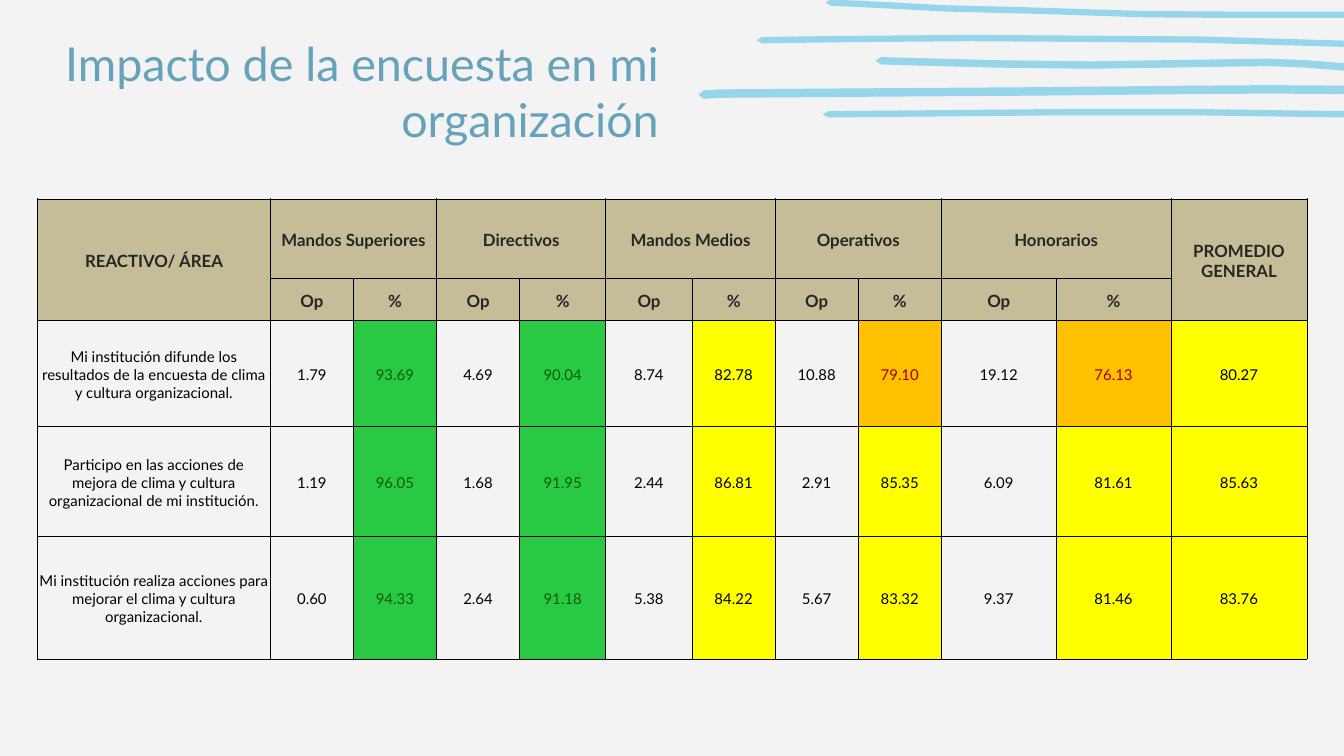
from dataclasses import dataclass
from lxml.etree import SubElement as Sub
from pptx import Presentation
from pptx.dml.color import RGBColor as RGB
from pptx.enum.text import MSO_ANCHOR as Anchor, PP_ALIGN as Align
from pptx.oxml.ns import qn
from pptx.util import Cm, Pt


@dataclass(frozen=True)
class Theme:
    font: str = "Lato"
    back: str = "F3F3F3"
    wave: str = "97D5EA"
    title: str = "66A2B9"
    head: str = "C4BD97"
    label: str = "262626"
    ink: str = "000000"
    high: tuple = ("29C944", "006100")
    mid: tuple = ("FFFF00", "000000")
    low: tuple = ("FFC000", "9C0006")
    big: float = 25
    small: float = 9
    tiny: float = 8


theme = Theme()


def write(frame, text, size, color, align, bold=False):
    frame.word_wrap = True
    par = frame.paragraphs[0]
    par.alignment = align
    run = par.add_run()
    run.text = text
    look = {"name": theme.font, "size": Pt(size), "bold": bold}
    for key, val in look.items():
        setattr(run.font, key, val)
    run.font.color.rgb = RGB.from_string(color)


def fill_cell(cell, text, size, color, back=None, bold=False):
    look = {
        "margin_left": Cm(0.03), "margin_right": Cm(0.03),
        "margin_top": Cm(0.03), "margin_bottom": 0,
        "vertical_anchor": Anchor.MIDDLE,
    }
    for key, val in look.items():
        setattr(cell, key, val)
    props = cell._tc.get_or_add_tcPr()
    for side in ("lnL", "lnR", "lnT", "lnB"):
        line = Sub(props, qn(f"a:{side}"), w=str(Pt(0.5)))
        solid = Sub(line, qn("a:solidFill"))
        Sub(solid, qn("a:srgbClr"), val=theme.ink)
    if back:
        cell.fill.solid()
        cell.fill.fore_color.rgb = RGB.from_string(back)
    else:
        cell.fill.background()
    if text:
        write(cell.text_frame, text, size, color, Align.CENTER, bold)


deck = Presentation()
deck.slide_width, deck.slide_height = Cm(25.4), Cm(14.29)
slide = deck.slides.add_slide(deck.slide_layouts[6])
slide.background.fill.solid()
slide.background.fill.fore_color.rgb = RGB.from_string(theme.back)

waves = [
    (0.06, [(15.65, 2.16), (15.85, 2.16), (20.2, 2.12), (22.5, 2.12),
            (25.3, 2.16), (25.45, 2.16)]),
    (0.08, [(13.3, 1.79), (13.6, 1.77), (16.4, 1.75), (19.4, 1.73),
            (22.5, 1.7), (24, 1.69), (25.45, 1.7)]),
    (0.07, [(16.65, 1.15), (18.85, 1.21), (20.6, 1.23), (22, 1.21),
            (23.3, 1.19), (24, 1.18), (24.7, 1.21), (25.45, 1.27)]),
    (0.06, [(14.4, 0.76), (15.9, 0.74), (18.3, 0.72), (19.9, 0.73),
            (22.7, 0.75), (25.45, 0.83)]),
    (0.06, [(15.7, 0.05), (16.75, 0.1), (17.85, 0.16), (19.45, 0.2),
            (21.65, 0.27), (23.25, 0.28), (25.45, 0.28)]),
]
for half, spine in waves:
    (left, start), (right, end) = spine[0], spine[-1]
    top = [(x, y - half) for x, y in spine]
    low = [(x, y + half) for x, y in reversed(spine)]
    edge = top + [(right + 0.07, end)] + low
    pen = slide.shapes.build_freeform(Cm(left - 0.1), Cm(start))
    pen.add_line_segments([(Cm(x), Cm(y)) for x, y in edge], close=True)
    wave = pen.convert_to_shape()
    wave.shadow.inherit = False
    wave.fill.solid()
    wave.fill.fore_color.rgb = RGB.from_string(theme.wave)
    wave.line.fill.background()

title = slide.shapes.add_textbox(Cm(-0.2), Cm(0.41), Cm(12.9), Cm(1.57))
frame = title.text_frame
for side in ("left", "right", "top", "bottom"):
    setattr(frame, f"margin_{side}", Cm(0.25))
write(frame, "Impacto de la encuesta en mi organización", theme.big,
      theme.title, Align.RIGHT)

groups = ["Mandos Superiores", "Directivos", "Mandos Medios", "Operativos",
          "Honorarios"]
heads = ["REACTIVO/ ÁREA"]
subs = [""]
for group in groups:
    heads += [group, ""]
    subs += ["Op", "%"]
heads.append("PROMEDIO GENERAL")
subs.append("")
items = [
    ("Mi institución difunde los resultados de la encuesta de clima y cultura "
     "organizacional.",
     "1.79 93.69 4.69 90.04 8.74 82.78 10.88 79.10 19.12 76.13 80.27"),
    ("Participo en las acciones de mejora de clima y cultura organizacional "
     "de mi institución.",
     "1.19 96.05 1.68 91.95 2.44 86.81 2.91 85.35 6.09 81.61 85.63"),
    ("Mi institución realiza acciones para mejorar el clima y cultura "
     "organizacional.",
     "0.60 94.33 2.64 91.18 5.38 84.22 5.67 83.32 9.37 81.46 83.76"),
]
wides = [4.4, 1.57, 1.57, 1.57, 1.63, 1.63, 1.57, 1.57, 1.57, 2.17, 2.17, 2.57]
highs = [1.51, 0.79, 2, 2.08, 2.31]

grid = slide.shapes.add_table(len(highs), len(wides), Cm(0.71), Cm(3.76),
                              Cm(sum(wides)), Cm(sum(highs))).table
grid.first_row = grid.horz_banding = False
for col, wide in zip(grid.columns, wides):
    col.width = Cm(wide)
for row, high in zip(grid.rows, highs):
    row.height = Cm(high)

last = len(wides) - 1
for r, texts in enumerate((heads, subs)):
    for c, text in enumerate(texts):
        fill_cell(grid.cell(r, c), text, theme.small, theme.label, theme.head,
                  True)
for c in (0, last):
    grid.cell(0, c).merge(grid.cell(1, c))
for c in range(1, last, 2):
    grid.cell(0, c).merge(grid.cell(0, c + 1))

for r, (item, nums) in enumerate(items, 2):
    fill_cell(grid.cell(r, 0), item, theme.tiny, theme.ink)
    for c, num in enumerate(nums.split(), 1):
        back, ink = None, theme.ink
        if c % 2 == 0 or c == last:
            rate = float(num)
            back, ink = (theme.high if rate >= 90 else
                         theme.mid if rate >= 80 else theme.low)
        fill_cell(grid.cell(r, c), num, theme.tiny, ink, back)

deck.save("out.pptx")
